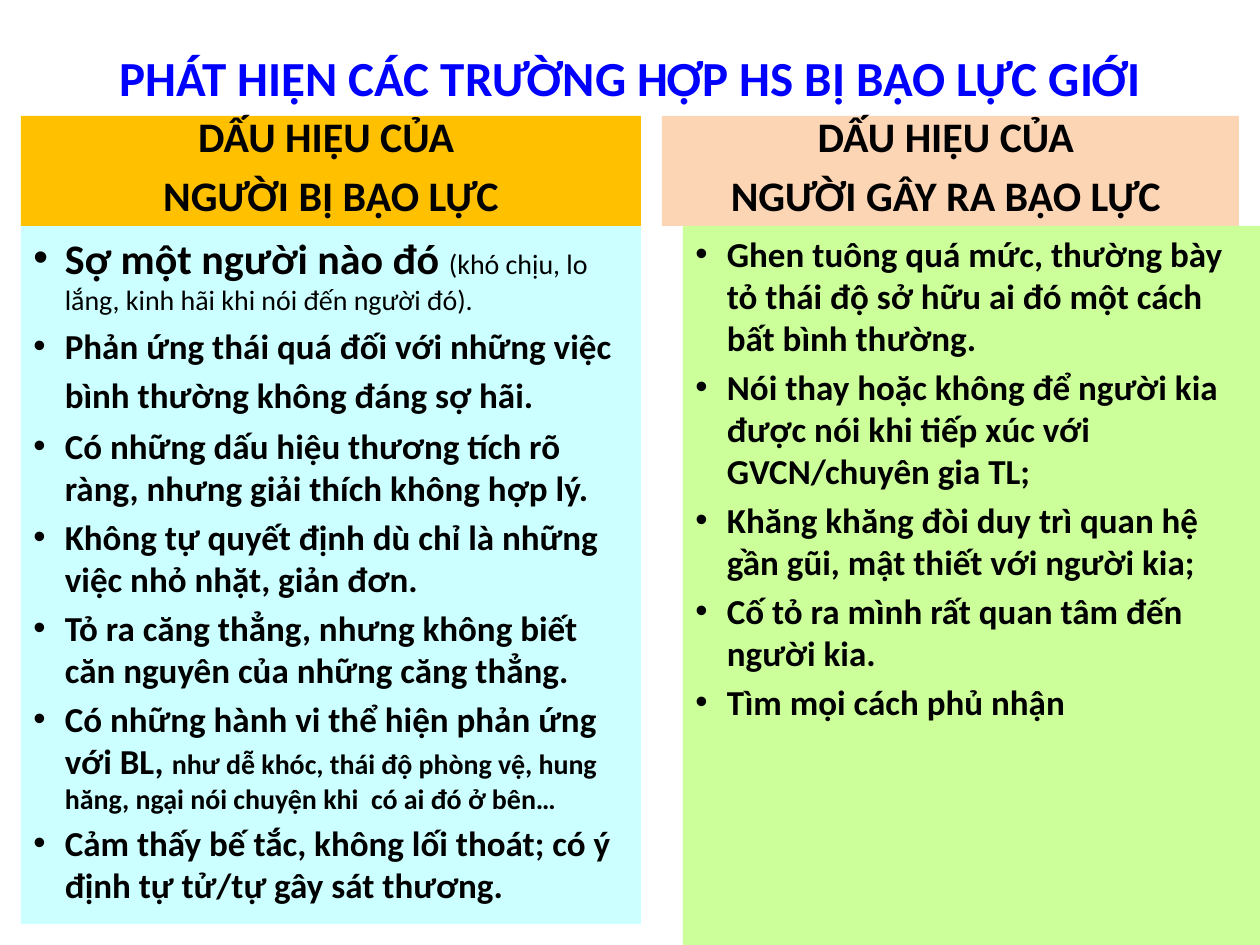
from dataclasses import dataclass
from lxml.etree import SubElement
from pptx import Presentation
from pptx.dml.color import RGBColor as Rgb
from pptx.enum.shapes import MSO_SHAPE as Shape
from pptx.enum.text import MSO_ANCHOR as Anchor, PP_ALIGN as Align
from pptx.oxml.ns import qn

PX = 914400 // 126
FONT = "Calibri"
INK = {
    "title": "0000FF", "text": "000000",
    "gold": "FFC000", "aqua": "CCFFFF",
    "peach": "FCD5B5", "lime": "CCFF99",
}


@dataclass(frozen=True)
class Run:
    text: str
    size: int = 20
    bold: bool = True


@dataclass(frozen=True)
class Box:
    left: int
    top: int
    width: int
    height: int


@dataclass(frozen=True)
class Panel:
    box: Box
    fill: str
    paras: list[list[Run]]
    head: bool = False


def heads(*lines: str) -> list[list[Run]]:
    return [[Run(line, 24)] for line in lines]


def set_para(para, bullet: bool) -> None:
    """Set spacing to a share of the line, and hang a bullet if asked."""
    props = para._p.get_or_add_pPr()
    gap = SubElement(props, qn("a:spcBef"))
    SubElement(gap, qn("a:spcPct")).set("val", "20000")
    if bullet:
        indent = 914400 // 4
        props.set("marL", str(indent))
        props.set("indent", str(-indent))
        SubElement(props, qn("a:buFont")).set("typeface", "Arial")
        SubElement(props, qn("a:buChar")).set("char", "•")


def add_run(para, run: Run, ink: str) -> None:
    item = para.add_run()
    item.text = run.text
    form = {"name": FONT, "size": run.size * 12700, "bold": run.bold}
    for key, value in form.items():
        setattr(item.font, key, value)
    item.font.color.rgb = Rgb.from_string(INK[ink])


def place(box: Box) -> list[int]:
    return [n * PX for n in (box.left, box.top, box.width, box.height)]


def add_title(slide, box: Box, run: Run) -> None:
    frame = slide.shapes.add_textbox(*place(box)).text_frame
    frame.word_wrap = True
    frame.vertical_anchor = Anchor.MIDDLE
    para = frame.paragraphs[0]
    para.alignment = Align.CENTER
    add_run(para, run, "title")


def add_panel(slide, panel: Panel) -> None:
    shape = slide.shapes.add_shape(Shape.RECTANGLE, *place(panel.box))
    shape.shadow.inherit = False
    shape.fill.solid()
    shape.fill.fore_color.rgb = Rgb.from_string(INK[panel.fill])
    shape.line.fill.background()
    frame = shape.text_frame
    frame.word_wrap = True
    frame.vertical_anchor = Anchor.BOTTOM if panel.head else Anchor.TOP
    for i, runs in enumerate(panel.paras):
        para = frame.add_paragraph() if i else frame.paragraphs[0]
        para.alignment = Align.CENTER if panel.head else Align.LEFT
        set_para(para, not panel.head)
        for run in runs:
            add_run(para, run, "text")


TITLE = Run("PHÁT HIỆN CÁC TRƯỜNG HỢP HS BỊ BẠO LỰC GIỚI", 28)
VICTIM = [
    [Run("Sợ một người nào đó ", 24),
     Run("(khó chịu, lo lắng, kinh hãi khi nói đến người đó).", 16, False)],
    [Run("Phản ứng thái quá đối với những việc bình thường không đáng sợ hãi."),
     Run(" ", 24, False)],
    [Run("Có những dấu hiệu thương tích rõ ràng, nhưng giải thích không hợp lý.")],
    [Run("Không tự quyết định dù chỉ là những việc nhỏ nhặt, giản đơn.")],
    [Run("Tỏ ra căng thẳng, nhưng không biết căn nguyên của những căng thẳng.")],
    [Run("Có những hành vi thể hiện phản ứng với BL, "),
     Run("như dễ khóc, thái độ phòng vệ, hung hăng, ngại nói chuyện khi  "
         "có ai đó ở bên…", 16)],
    [Run("Cảm thấy bế tắc, không lối thoát; có ý định tự tử/tự gây sát thương.")],
]
ABUSER = [[Run(text)] for text in (
    "Ghen tuông quá mức, thường bày tỏ thái độ sở hữu ai đó một cách bất bình thường.",
    "Nói thay hoặc không để người kia được nói khi tiếp xúc với GVCN/chuyên gia TL;",
    "Khăng khăng đòi duy trì quan hệ gần gũi, mật thiết với người kia;",
    "Cố tỏ ra mình rất quan tâm đến người kia.",
    "Tìm mọi cách phủ nhận",
)]
TOP, MID, HEAD = 116, 226, 110
PANELS = [
    Panel(Box(21, TOP, 620, HEAD), "gold",
          heads("DẤU HIỆU CỦA ", "NGƯỜI BỊ BẠO LỰC"), True),
    Panel(Box(21, MID, 620, 698), "aqua", VICTIM),
    Panel(Box(662, TOP, 577, HEAD), "peach",
          heads("DẤU HIỆU CỦA ", "NGƯỜI GÂY RA BẠO LỰC "), True),
    Panel(Box(683, MID, 577, 719), "lime", ABUSER),
]


def main() -> None:
    deck = Presentation()
    deck.slide_width, deck.slide_height = 1260 * PX, 945 * PX
    slide = deck.slides.add_slide(deck.slide_layouts[6])
    add_title(slide, Box(63, 38, 1134, 78), TITLE)
    for panel in PANELS:
        add_panel(slide, panel)
    deck.save("out.pptx")


if __name__ == "__main__":
    main()
